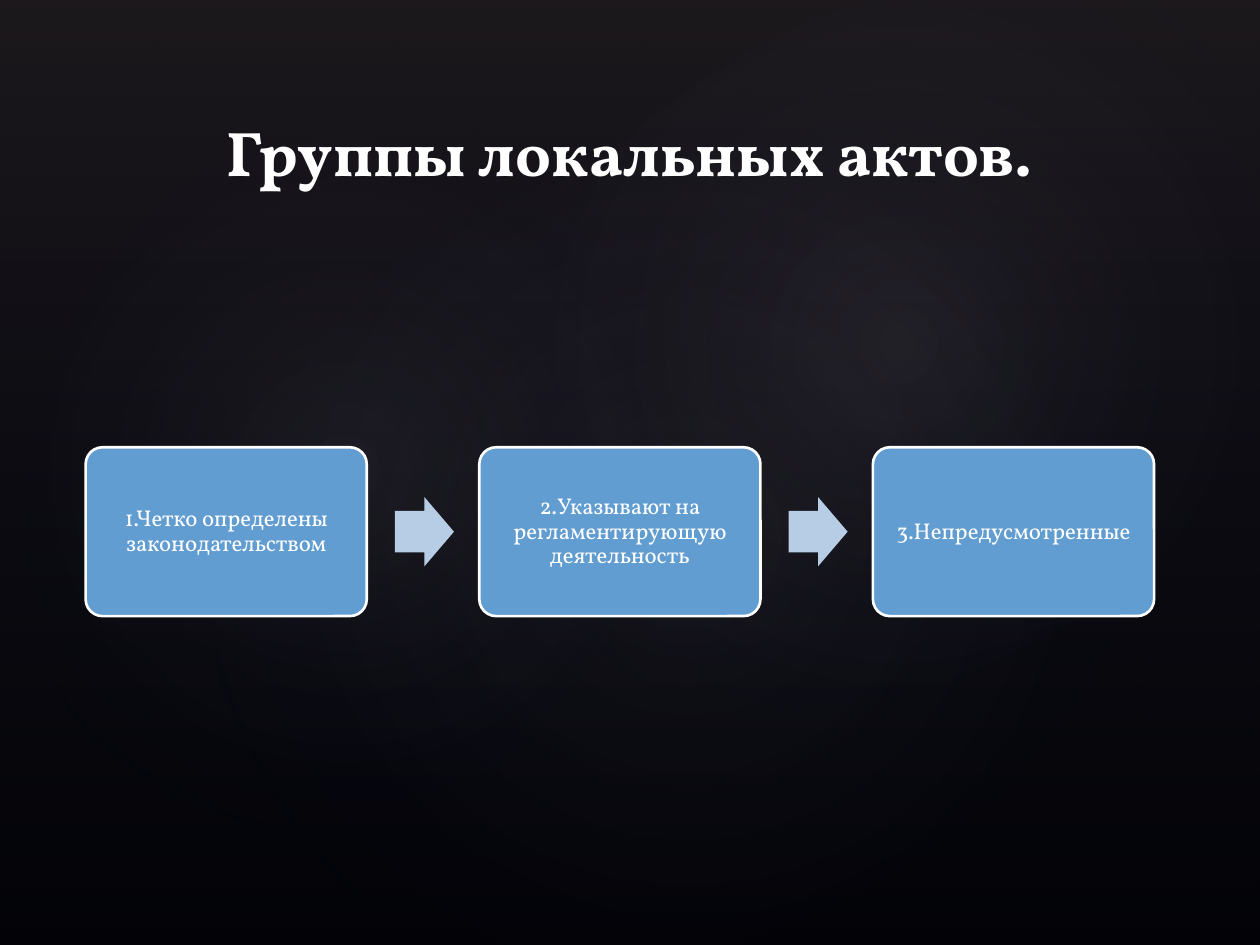
from dataclasses import dataclass

from lxml import etree
from pptx import Presentation
from pptx import util as u
from pptx.dml.color import RGBColor
from pptx.enum import shapes, text
from pptx.oxml import ns

WIDTH, HEIGHT = 10, 7.5


@dataclass(frozen=True)
class Theme:
    font: str = "Vollkorn"
    title_size: float = 36
    step_size: float = 13
    background: str = "000000"
    ink: str = "FFFFFF"
    step: str = "629DD1"
    arrow: str = "B7CCE5"
    veil: str = "504652"
    glow: str = "C4BCC6"
    navy: str = "242852"


THEME = Theme()
STEPS = (
    "1.Четко определены законодательством",
    "2.Указывают на регламентирующую деятельность",
    "3.Непредусмотренные",
)
# box, rotation, opacity at the centre in percent
GLOWS = (
    ((1.5, 1.14, 7.92, 6.24), 328.7, 7),
    ((-0.3, 1.28, 6.06, 4.9), 294.3, 8),
    ((3.58, 0.13, 7.09, 5.2), 328.7, 8),
)


def inches(box):
    return [u.Inches(length) for length in box]


def add_preset(slide, preset, box, fill=None, line=None, adjustments=()):
    shape = slide.shapes.add_shape(preset, *inches(box))
    shape.shadow.inherit = False
    for index, value in enumerate(adjustments):
        shape.adjustments[index] = value
    if fill:
        shape.fill.solid()
        shape.fill.fore_color.rgb = RGBColor.from_string(fill)
    if line:
        shape.line.color.rgb = RGBColor.from_string(line)
        shape.line.width = u.Pt(1.5)
    else:
        shape.line.fill.background()
    return shape


def fade(shape, stops, angle=None):
    """Fill with (position, colour, opacity) stops in percent; radial without an angle."""
    shape.fill.gradient()
    gradient = shape.fill._xPr.find(ns.qn("a:gradFill"))
    for child in list(gradient):
        gradient.remove(child)

    def add(parent, tag, **attributes):
        return etree.SubElement(parent, ns.qn(tag), attributes)

    stop_list = add(gradient, "a:gsLst")
    for position, colour, opacity in stops:
        stop = add(stop_list, "a:gs", pos=str(position * 1000))
        add(add(stop, "a:srgbClr", val=colour), "a:alpha", val=str(opacity * 1000))
    if angle is None:
        centre = add(gradient, "a:path", path="circle")
        add(centre, "a:fillToRect", l="50000", t="50000", r="50000", b="50000")
    else:
        add(gradient, "a:lin", ang=str(angle * 60000), scaled="0")


def write(shape, words, size, bold=False, anchor=text.MSO_ANCHOR.MIDDLE,
          inset=None, line_spacing=None, space_after=None):
    frame = shape.text_frame
    frame.word_wrap = True
    frame.vertical_anchor = anchor
    if inset is not None:
        frame.margin_left = frame.margin_right = u.Inches(inset)
        frame.margin_top = frame.margin_bottom = u.Inches(inset)
    paragraph = frame.paragraphs[0]
    paragraph.alignment = text.PP_ALIGN.CENTER
    if line_spacing:
        paragraph.line_spacing = line_spacing
    if space_after:
        paragraph.space_after = u.Pt(space_after)
    run = paragraph.add_run()
    run.text = words
    run.font.name = THEME.font
    run.font.size = u.Pt(size)
    run.font.bold = bold
    run.font.color.rgb = RGBColor.from_string(THEME.ink)


def draw_backdrop(slide, box):
    slide.background.fill.solid()
    slide.background.fill.fore_color.rgb = RGBColor.from_string(THEME.background)
    veil = add_preset(slide, shapes.MSO_SHAPE.RECTANGLE, box)
    fade(veil, [(0, THEME.veil, 36), (100, THEME.navy, 10)], angle=90)
    for glow_box, rotation, opacity in GLOWS:
        glow = add_preset(slide, shapes.MSO_SHAPE.OVAL, glow_box)
        glow.rotation = rotation
        fade(glow, [(0, THEME.glow, opacity), (58, THEME.navy, 0)])


def draw_title(slide, box, words):
    title = slide.shapes.add_textbox(*inches(box))
    write(title, words, THEME.title_size, bold=True, anchor=text.MSO_ANCHOR.BOTTOM)


def draw_process(slide, box, steps):
    """Equal steps across the box, with an arrow in each gap."""
    left, top, width, height = box
    # each gap is 0.4 of a step wide
    step_width = width / (len(steps) + 0.4 * (len(steps) - 1))
    pitch = 1.4 * step_width
    arrow_width, arrow_height = 0.21 * step_width, 0.41 * height
    for index, words in enumerate(steps):
        x = left + index * pitch
        if index:
            arrow_box = (x - 0.3 * step_width, top + (height - arrow_height) / 2,
                         arrow_width, arrow_height)
            add_preset(slide, shapes.MSO_SHAPE.RIGHT_ARROW, arrow_box,
                       fill=THEME.arrow, adjustments=(0.6, 0.5))
        step = add_preset(slide, shapes.MSO_SHAPE.ROUNDED_RECTANGLE,
                          (x, top, step_width, height),
                          fill=THEME.step, line=THEME.ink, adjustments=(0.1,))
        write(step, words, THEME.step_size, inset=0.05,
              line_spacing=0.9, space_after=0.35 * THEME.step_size)


def main():
    deck = Presentation()
    deck.slide_width, deck.slide_height = inches((WIDTH, HEIGHT))
    slide = deck.slides.add_slide(deck.slide_layouts[6])
    draw_backdrop(slide, (0, 0, WIDTH, HEIGHT))
    draw_title(slide, (0.43, 0.76, 9.13, 0.79), "Группы локальных актов.")
    draw_process(slide, (0.68, 3.55, 8.48, 1.34), STEPS)
    deck.save("out.pptx")


if __name__ == "__main__":
    main()
